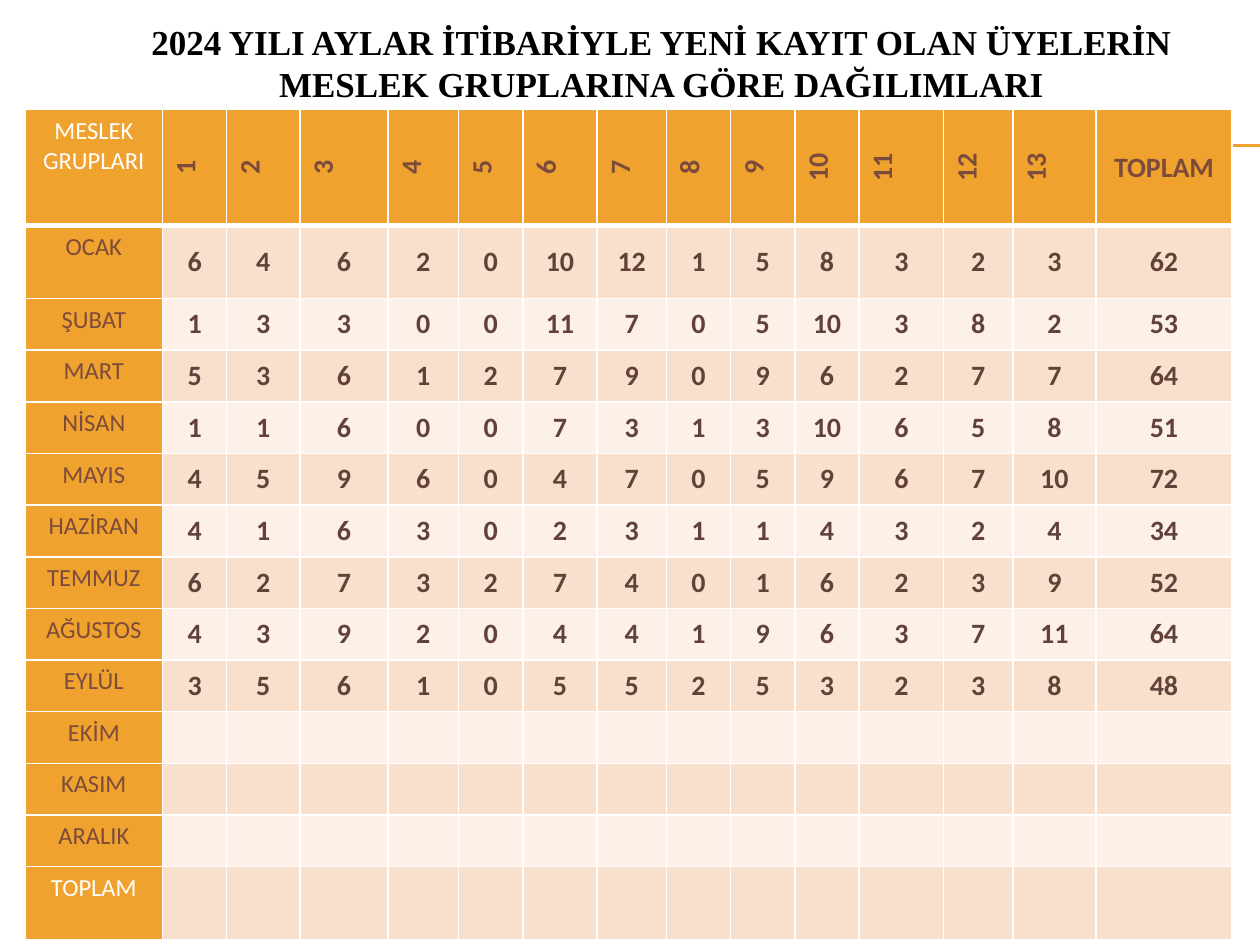
from lxml import etree
from pptx import Presentation, util as u
from pptx.dml.color import RGBColor
from pptx.enum import shapes, text
from pptx.oxml.ns import qn

TITLE = "2024 YILI AYLAR İTİBARİYLE YENİ KAYIT OLAN ÜYELERİN MESLEK GRUPLARINA GÖRE DAĞILIMLARI"
CORNER, TOTAL = "MESLEK GRUPLARI", "TOPLAM"
GROUPS = [str(number) for number in range(1, 14)]
MONTHS = [
    ("OCAK", [6, 4, 6, 2, 0, 10, 12, 1, 5, 8, 3, 2, 3, 62]),
    ("ŞUBAT", [1, 3, 3, 0, 0, 11, 7, 0, 5, 10, 3, 8, 2, 53]),
    ("MART", [5, 3, 6, 1, 2, 7, 9, 0, 9, 6, 2, 7, 7, 64]),
    ("NİSAN", [1, 1, 6, 0, 0, 7, 3, 1, 3, 10, 6, 5, 8, 51]),
    ("MAYIS", [4, 5, 9, 6, 0, 4, 7, 0, 5, 9, 6, 7, 10, 72]),
    ("HAZİRAN", [4, 1, 6, 3, 0, 2, 3, 1, 1, 4, 3, 2, 4, 34]),
    ("TEMMUZ", [6, 2, 7, 3, 2, 7, 4, 0, 1, 6, 2, 3, 9, 52]),
    ("AĞUSTOS", [4, 3, 9, 2, 0, 4, 4, 1, 9, 6, 3, 7, 11, 64]),
    ("EYLÜL", [3, 5, 6, 1, 0, 5, 5, 2, 5, 3, 2, 3, 8, 48]),
    ("EKİM", []),
    ("KASIM", []),
    ("ARALIK", []),
    (TOTAL, []),
]
COLUMNS = [1.09, 0.51, 0.58, 0.7, 0.56, 0.51, 0.59, 0.55, 0.51, 0.51, 0.51, 0.67, 0.55, 0.66, 1.08]
ROWS = [0.92, 0.58] + [0.41] * 11 + [0.58]
COLORS = {
    "orange": "F0A22E", "peach": "F9E0CD", "cream": "FCF0E8", "white": "FFFFFF",
    "black": "000000", "brown": "7C4B3B", "dark": "624139",
}


def color(name):
    return RGBColor.from_string(COLORS[name])


def write(frame, words, size=16, ink="brown", bold=True, font="Calibri"):
    para = frame.paragraphs[0]
    para.alignment = text.PP_ALIGN.CENTER
    span = para.add_run()
    span.text = words
    span.font.size = u.Pt(size)
    span.font.bold = bold
    span.font.name = font
    span.font.color.rgb = color(ink)


def set_borders(cell, **widths):
    properties = cell._tc.get_or_add_tcPr()
    for side in "LRTB":
        width = u.Pt(widths.get(side, 1))
        line = etree.SubElement(properties, qn(f"a:ln{side}"), w=str(width))
        fill = etree.SubElement(line, qn("a:solidFill"))
        etree.SubElement(fill, qn("a:srgbClr"), val=COLORS["white"])


def paint(cell, name):
    cell.fill.solid()
    cell.fill.fore_color.rgb = color(name)


def add_rule(page, top):
    rule = page.shapes.add_connector(
        shapes.MSO_CONNECTOR.STRAIGHT, u.Inches(0.56), u.Inches(top), u.Inches(10), u.Inches(top))
    rule.line.color.rgb = color("orange")
    rule.line.width = u.Pt(0.75)
    etree.SubElement(rule._element.spPr, qn("a:effectLst"))


def add_title(page):
    box = page.shapes.add_textbox(u.Inches(0.5), 0, u.Inches(9.5), u.Inches(0.99))
    box.text_frame.word_wrap = True
    box.text_frame.vertical_anchor = text.MSO_ANCHOR.MIDDLE
    write(box.text_frame, TITLE, size=20, ink="black", font="Times New Roman")


def fill_header(table):
    for column, words in enumerate([CORNER, *GROUPS, TOTAL]):
        cell = table.cell(0, column)
        set_borders(cell, B=3)
        paint(cell, "orange")
        if words == CORNER:
            write(cell.text_frame, words, size=14, ink="white", bold=False)
            continue
        write(cell.text_frame, words)
        if words == TOTAL:
            cell.vertical_anchor = text.MSO_ANCHOR.MIDDLE
        else:
            cell._tc.get_or_add_tcPr().set("vert", "vert270")


def fill_month(table, row, name, values):
    for column in range(len(COLUMNS)):
        cell = table.cell(row, column)
        set_borders(cell, T=3 if row == 1 else 1)
        if column == 0:
            paint(cell, "orange")
            ink = "white" if name == TOTAL else "brown"
            write(cell.text_frame, name, size=14, ink=ink, bold=False)
            continue
        paint(cell, "peach" if row % 2 else "cream")
        if values:
            cell.vertical_anchor = text.MSO_ANCHOR.MIDDLE
            write(cell.text_frame, str(values[column - 1]), ink="dark")


def add_members_table(page):
    table = page.shapes.add_table(
        len(ROWS), len(COLUMNS), u.Inches(0.2), u.Inches(0.87),
        u.Inches(sum(COLUMNS)), u.Inches(sum(ROWS))).table
    for column, width in zip(table.columns, COLUMNS):
        column.width = u.Inches(width)
    for row, height in zip(table.rows, ROWS):
        row.height = u.Inches(height)
    fill_header(table)
    for row, (name, values) in enumerate(MONTHS, start=1):
        fill_month(table, row, name, values)


def main():
    deck = Presentation()
    deck.slide_width, deck.slide_height = u.Inches(10), u.Inches(7.5)
    page = deck.slides.add_slide(deck.slide_layouts[6])
    for top in (1.15, 1.16):
        add_rule(page, top)
    add_title(page)
    add_members_table(page)
    deck.save("out.pptx")


if __name__ == "__main__":
    main()
